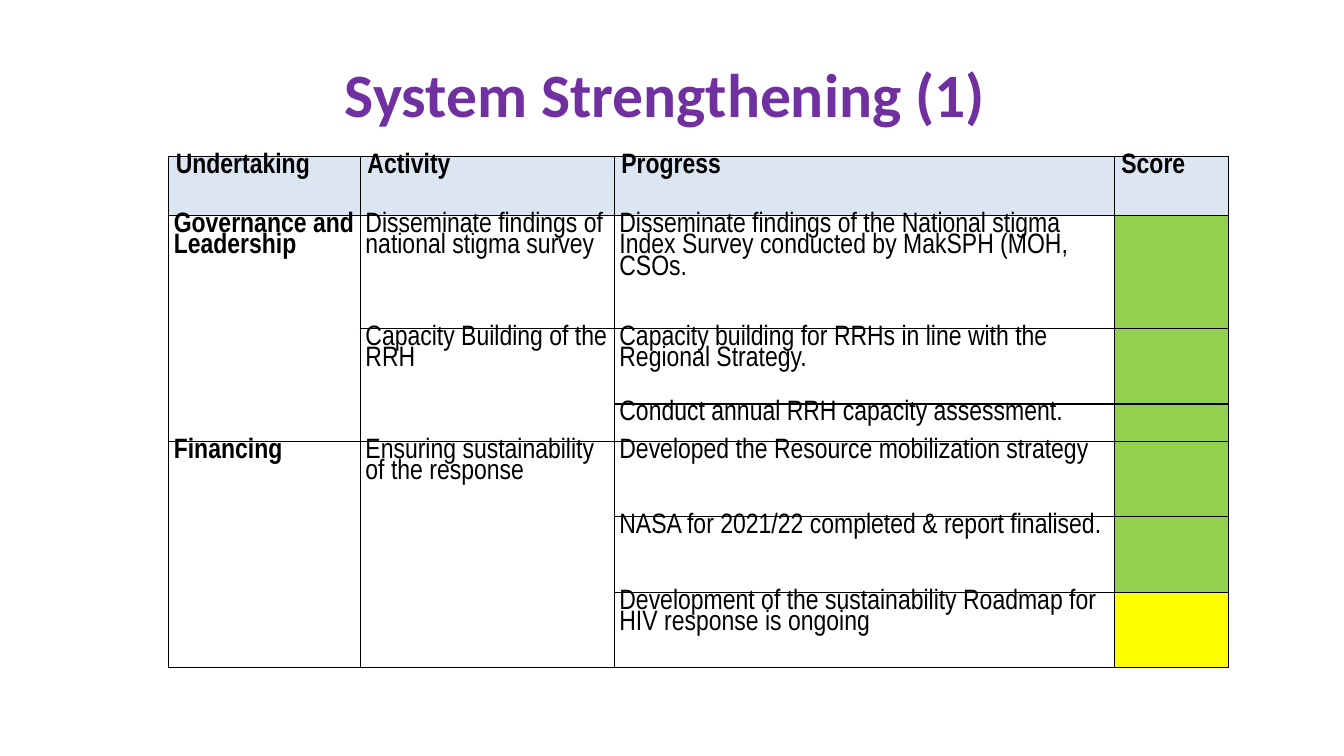
"""Build the System Strengthening slide with its scored progress table."""
from dataclasses import dataclass

from lxml.etree import fromstring
from pptx import Presentation
from pptx.dml.color import RGBColor as RGB
from pptx.enum.text import MSO_ANCHOR as Anchor, PP_ALIGN as Align
from pptx.util import Cm, Pt


@dataclass(frozen=True)
class Theme:
    title: str = "7030A0"
    ink: str = "000000"
    head: str = "DCE6F2"
    plain: str = "FFFFFF"
    done: str = "92D050"
    ongoing: str = "FFFF00"
    title_font: str = "Calibri"
    body_font: str = "Arial Narrow"
    title_size: int = 44
    body_size: int = 20


theme = Theme()
NS = "http://schemas.openxmlformats.org/drawingml/2006/main"


def write(frame, text, font=theme.body_font, size=theme.body_size,
          color=theme.ink, bold=False, align=Align.LEFT, space=0.8):
    para = frame.paragraphs[0]
    para.alignment = align
    para.line_spacing = space
    run = para.add_run()
    run.text = text
    run.font.name = font
    run.font.size = Pt(size)
    run.font.bold = bold
    run.font.color.rgb = RGB.from_string(color)


def style(cell, color, side):
    cell.fill.solid()
    cell.fill.fore_color.rgb = RGB.from_string(color)
    cell.margin_left = cell.margin_right = Cm(side)
    cell.margin_top = cell.margin_bottom = 0
    props = cell._tc.get_or_add_tcPr()
    for spot, edge in enumerate(("lnL", "lnR", "lnT", "lnB")):
        props.insert(spot, fromstring(
            f'<a:{edge} xmlns:a="{NS}" w="12700"><a:solidFill>'
            f'<a:srgbClr val="{theme.ink}"/></a:solidFill></a:{edge}>'))


deck = Presentation()
deck.slide_width, deck.slide_height = Cm(33.87), Cm(19.05)
slide = deck.slides.add_slide(deck.slide_layouts[5])

title = slide.shapes.title
title.left, title.top, title.width, title.height = Cm(1.7), Cm(0.76), Cm(30.48), Cm(3.18)
title.text_frame.vertical_anchor = Anchor.MIDDLE
write(title.text_frame, "System Strengthening (1) ", font=theme.title_font,
      size=theme.title_size, color=theme.title, bold=True, align=Align.CENTER, space=1.0)

rows = [
    ("Undertaking", "Activity", "Progress", "Score"),
    ("Governance and Leadership", "Disseminate findings of national stigma survey",
     "Disseminate findings of the National stigma Index Survey conducted by MakSPH (MOH, CSOs.", ""),
    ("", "Capacity Building of the RRH",
     "Capacity building for RRHs in line with the Regional Strategy.", ""),
    ("", "", "Conduct annual RRH capacity assessment.", ""),
    ("Financing", "Ensuring sustainability of the response",
     "Developed the Resource mobilization strategy", ""),
    ("", "", "NASA for 2021/22 completed & report finalised.", ""),
    ("", "", "Development of the sustainability Roadmap for HIV response is ongoing", ""),
]
scores = [theme.head] + [theme.done] * 5 + [theme.ongoing]
widths = (4.83, 6.4, 12.6, 2.87)
heights = (1.5, 2.84, 1.9, 0.94, 1.9, 1.9, 1.9)

table = slide.shapes.add_table(len(rows), len(widths), Cm(4.25), Cm(3.94),
                               Cm(sum(widths)), Cm(sum(heights))).table
table.first_row = table.horz_banding = False
for col, width in zip(table.columns, widths):
    col.width = Cm(width)
for row, height in zip(table.rows, heights):
    row.height = Cm(height)

for r, (texts, score) in enumerate(zip(rows, scores)):
    for c, text in enumerate(texts):
        cell = table.cell(r, c)
        fill = theme.head if r == 0 else score if c == 3 else theme.plain
        style(cell, fill, side=0.18 if r == 0 else 0.13)
        if text:
            write(cell.text_frame, text, bold=r == 0 or c == 0)

for top, end, c in ((1, 3, 0), (2, 3, 1), (4, 6, 0), (4, 6, 1)):
    table.cell(top, c).merge(table.cell(end, c))

deck.save("out.pptx")
